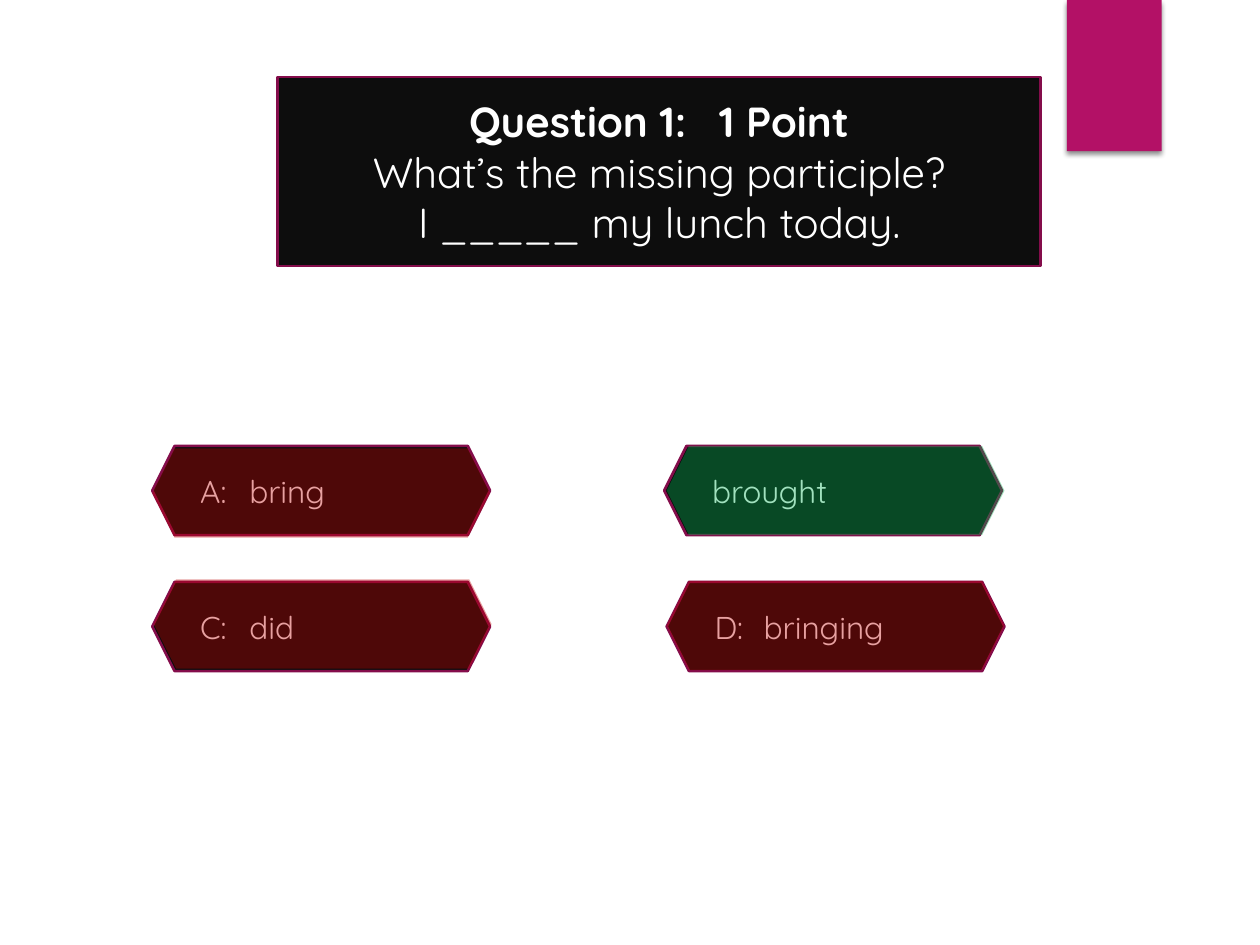
import pptx
import pptx.util
import pptx.dml.color
import pptx.enum.shapes
import pptx.enum.text
import pptx.oxml
import pptx.oxml.ns
import lxml.etree

Cm, Pt = pptx.util.Cm, pptx.util.Pt
SHAPES = pptx.enum.shapes.MSO_SHAPE
ALIGN = pptx.enum.text.PP_ALIGN
qn = pptx.oxml.ns.qn

HEADING = ("Question 1:", " ", "1 Point")
QUESTION_LINES = ["What’s the missing participle?", "I _____ my lunch today."]
WRONG, RIGHT = "C00000", "00B050"
ANSWERS = [
    {"text": "A:\tbring", "cell": (0, 0), "nudge": 0, "tint": WRONG, "tint_nudge": (0, 0.05)},
    {"text": "brought", "cell": (1, 0), "nudge": -0.05, "tint": RIGHT, "tint_nudge": (0, 0)},
    {"text": "C:\tdid", "cell": (0, 1), "nudge": 0, "tint": WRONG, "tint_nudge": (0.03, -0.05)},
    {"text": "D:\tbringing", "cell": (1, 1), "nudge": 0, "tint": WRONG, "tint_nudge": (0, -0.02)},
]
GRID_LEFT, GRID_TOP = 3.07, 8.99
COLUMN_STEP, ROW_STEP = 10.37, 2.74
ANSWER_SIZE = (6.81, 1.8)
QUESTION_BOX = (5.59, 1.55, 15.39, 3.81)
RIBBON_BOX = (21.51, 0, 1.91, 3.05)
TAB_STOP = Cm(0.99)
TINT_ALPHA = 37

PLATE, EDGE, RIBBON, WHITE = "0D0D0D", "840D4B", "B31166", "FFFFFF"
ANSWER_FONT = {"name": "Quicksand", "size": Pt(18), "bold": False}
QUESTION_FONT = {"name": "Quicksand", "size": Pt(24), "bold": False}
HEADING_FONT = {**QUESTION_FONT, "bold": True}
PLATE_FRAME = {
    "word_wrap": True,
    "auto_size": pptx.enum.text.MSO_AUTO_SIZE.NONE,
    "vertical_anchor": pptx.enum.text.MSO_ANCHOR.MIDDLE,
}


def apply(target, values):
    for attribute, value in values.items():
        setattr(target, attribute, value)


def paint(color_owner, hex_color):
    color_owner.rgb = pptx.dml.color.RGBColor.from_string(hex_color)


def fill_solid(shape, hex_color):
    shape.fill.solid()
    paint(shape.fill.fore_color, hex_color)


def add_plain(slide, kind, box, hex_color):
    shape = slide.shapes.add_shape(kind, *map(Cm, box))
    shape.shadow.inherit = False
    fill_solid(shape, hex_color)
    shape.line.fill.background()
    return shape


def style_plate(shape):
    fill_solid(shape, PLATE)
    paint(shape.line.color, EDGE)
    shape.line.width = Pt(1.5)
    apply(shape.text_frame, PLATE_FRAME)


def add_run(paragraph, text, font_values):
    run = paragraph.add_run()
    run.text = text
    apply(run.font, font_values)
    paint(run.font.color, WHITE)
    return run


def add_ribbon(slide):
    ribbon = add_plain(slide, SHAPES.RECTANGLE, RIBBON_BOX, RIBBON)
    effects = ribbon._element.spPr.find(qn("a:effectLst"))
    shadow = lxml.etree.SubElement(
        effects, qn("a:outerShdw"), blurRad=str(Pt(3)), dist=str(Pt(2)), dir="5400000", rotWithShape="0")
    black = lxml.etree.SubElement(shadow, qn("a:srgbClr"), val="000000")
    lxml.etree.SubElement(black, qn("a:alpha"), val="45000")


def add_question(slide):
    question = slide.shapes.title
    apply(question, dict(zip(("left", "top", "width", "height"), map(Cm, QUESTION_BOX))))
    outline = lxml.etree.SubElement(question._element.spPr, qn("a:prstGeom"), prst="hexagon")
    lxml.etree.SubElement(outline, qn("a:avLst"))
    style_plate(question)
    heading = question.text_frame.paragraphs[0]
    heading.alignment = ALIGN.CENTER
    label, gap, points = [add_run(heading, part, HEADING_FONT) for part in HEADING]
    gap.font._element.set("spc", "1200")
    for line in QUESTION_LINES:
        paragraph = question.text_frame.add_paragraph()
        paragraph.alignment = ALIGN.CENTER
        add_run(paragraph, line, QUESTION_FONT)


def answer_corner(answer):
    column, row = answer["cell"]
    return GRID_LEFT + column * COLUMN_STEP, GRID_TOP + row * ROW_STEP


def add_answer(slide, answer):
    left, top = answer_corner(answer)
    plate = add_plain(slide, SHAPES.HEXAGON, (left + answer["nudge"], top, *ANSWER_SIZE), PLATE)
    style_plate(plate)
    paragraph = plate.text_frame.paragraphs[0]
    paragraph.alignment = ALIGN.LEFT
    tabs = lxml.etree.SubElement(paragraph._p.get_or_add_pPr(), qn("a:tabLst"))
    lxml.etree.SubElement(tabs, qn("a:tab"), pos=str(TAB_STOP), algn="l")
    add_run(paragraph, answer["text"], ANSWER_FONT)


def add_tint(slide, answer):
    left, top = answer_corner(answer)
    right_by, down_by = answer["tint_nudge"]
    tint = add_plain(slide, SHAPES.HEXAGON, (left + right_by, top + down_by, *ANSWER_SIZE), answer["tint"])
    color = tint._element.spPr.find(qn("a:solidFill")).find(qn("a:srgbClr"))
    lxml.etree.SubElement(color, qn("a:alpha"), val=str(TINT_ALPHA * 1000))


def main():
    deck = pptx.Presentation()
    apply(deck, {"slide_width": Cm(25.4), "slide_height": Cm(19.05)})
    slide = deck.slides.add_slide(deck.slide_layouts[5])
    add_ribbon(slide)
    add_question(slide)
    for add_layer in (add_answer, add_tint):
        for answer in ANSWERS:
            add_layer(slide, answer)
    deck.save("out.pptx")


if __name__ == "__main__":
    main()
